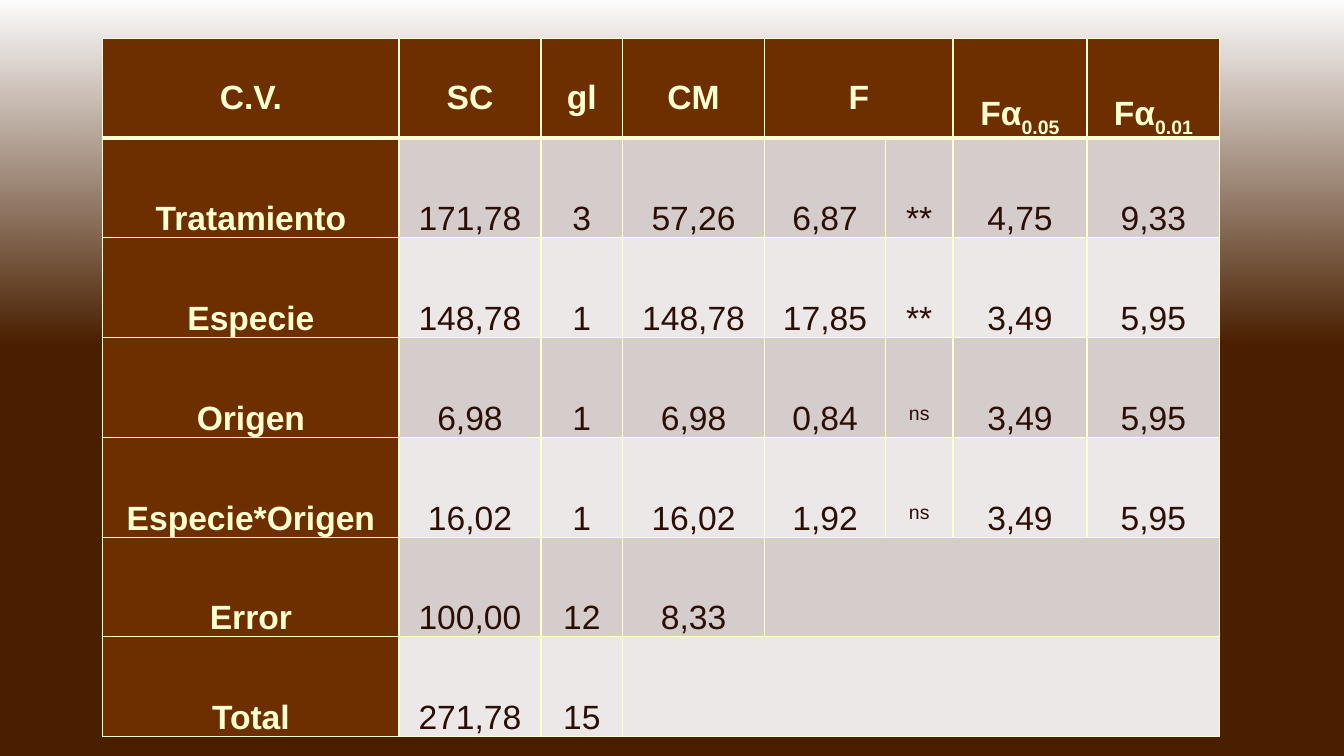
from dataclasses import dataclass

from lxml.etree import SubElement
from pptx import Presentation
from pptx.dml.color import RGBColor
from pptx.enum.shapes import MSO_SHAPE
from pptx.enum.text import MSO_ANCHOR, PP_ALIGN
from pptx.oxml import parse_xml
from pptx.oxml.ns import nsdecls, qn
from pptx.util import Inches, Pt


@dataclass(frozen=True)
class Theme:
    back: str = "491F00"
    glow: str = "FFFFFF"
    head: str = "6E2F00"
    cream: str = "FFFFD1"
    ink: str = "2D0E05"
    bands: tuple = ("D5CDCC", "EBE8E7")
    font: str = "Arial"
    size: int = 24
    thin: int = 1
    thick: int = 3


THEME = Theme()
WIDTHS = [2.94, 1.41, 0.81, 1.41, 1.2, 0.67, 1.33, 1.32]
ROWS = [
    ["C.V.", "SC", "gl", "CM", "F", "", "Fα_0.05", "Fα_0.01"],
    ["Tratamiento", "171,78", "3", "57,26", "6,87", "**", "4,75", "9,33"],
    ["Especie", "148,78", "1", "148,78", "17,85", "**", "3,49", "5,95"],
    ["Origen", "6,98", "1", "6,98", "0,84", "ns", "3,49", "5,95"],
    ["Especie*Origen", "16,02", "1", "16,02", "1,92", "ns", "3,49", "5,95"],
    ["Error", "100,00", "12", "8,33", "", "", "", ""],
    ["Total", "271,78", "15", "", "", "", "", ""],
]
SPANS = [(0, 4, 5), (5, 4, 7), (6, 3, 7)]


def write(line, text, color, bold=False, base=0):
    run = line.add_run()
    run.text = text
    font = run.font
    font.name, font.size, font.bold = THEME.font, Pt(THEME.size), bold
    font.color.rgb = RGBColor.from_string(color)
    if base:
        run._r.get_or_add_rPr().set("baseline", str(base * 1000))


def edge(cell, top, bottom):
    sides = {"L": THEME.thin, "R": THEME.thin, "T": top, "B": bottom}
    props = cell._tc.get_or_add_tcPr()
    for spot, (side, width) in enumerate(sides.items()):
        props.insert(spot, parse_xml(
            f'<a:ln{side} {nsdecls("a")} w="{Pt(width)}"><a:solidFill>'
            f'<a:srgbClr val="{THEME.cream}"/></a:solidFill></a:ln{side}>'))


def fill_cell(cell, text, row, col):
    dark = row == 0 or col == 0
    shade = THEME.head if dark else THEME.bands[(row - 1) % 2]
    cell.fill.solid()
    cell.fill.fore_color.rgb = RGBColor.from_string(shade)
    edge(cell, THEME.thick if row == 1 else THEME.thin,
         THEME.thick if row == 0 else THEME.thin)
    if not text:
        return
    cell.margin_left = cell.margin_right = Inches(0.05)
    cell.margin_top = cell.margin_bottom = 0
    middle = row == 0 and col < 6
    cell.vertical_anchor = MSO_ANCHOR.MIDDLE if middle else MSO_ANCHOR.BOTTOM
    line = cell.text_frame.paragraphs[0]
    line.alignment = PP_ALIGN.CENTER
    line.line_spacing = 1.5
    line.space_before = Pt(12)
    color = THEME.cream if dark else THEME.ink
    main, _, sub = text.partition("_")
    write(line, main, color, bold=dark, base=30 if main == "ns" else 0)
    if sub:
        write(line, sub, color, bold=dark, base=-25)


def add_glow(slide, left, top, width, height):
    glow = slide.shapes.add_shape(
        MSO_SHAPE.RECTANGLE, Inches(left), Inches(top),
        Inches(width), Inches(height))
    glow.shadow.inherit = False
    glow.line.fill.background()
    glow.fill.gradient()
    glow.fill.gradient_angle = 270
    for stop in glow.fill.gradient_stops:
        stop.color.rgb = RGBColor.from_string(THEME.glow)
    last = glow._element.xpath(".//a:gs/a:srgbClr")[-1]
    SubElement(last, qn("a:alpha")).set("val", "0")


def add_grid(slide, left, top, width, height):
    table = slide.shapes.add_table(
        len(ROWS), len(WIDTHS), Inches(left), Inches(top),
        Inches(width), Inches(height)).table
    table.first_row = table.horz_banding = False
    for col, share in zip(table.columns, WIDTHS):
        col.width = Inches(width * share / sum(WIDTHS))
    for row in table.rows:
        row.height = Inches(height / len(ROWS))
    for row, texts in enumerate(ROWS):
        for col, text in enumerate(texts):
            fill_cell(table.cell(row, col), text, row, col)
    for row, first, last in SPANS:
        table.cell(row, first).merge(table.cell(row, last))


def main():
    deck = Presentation()
    deck.slide_width, deck.slide_height = Inches(13.33), Inches(7.5)
    slide = deck.slides.add_slide(deck.slide_layouts[6])
    slide.background.fill.solid()
    slide.background.fill.fore_color.rgb = RGBColor.from_string(THEME.back)
    add_glow(slide, 0, 0, 13.33, 3.42)
    add_grid(slide, 1.02, 0.38, 11.08, 6.93)
    deck.save("out.pptx")


if __name__ == "__main__":
    main()
